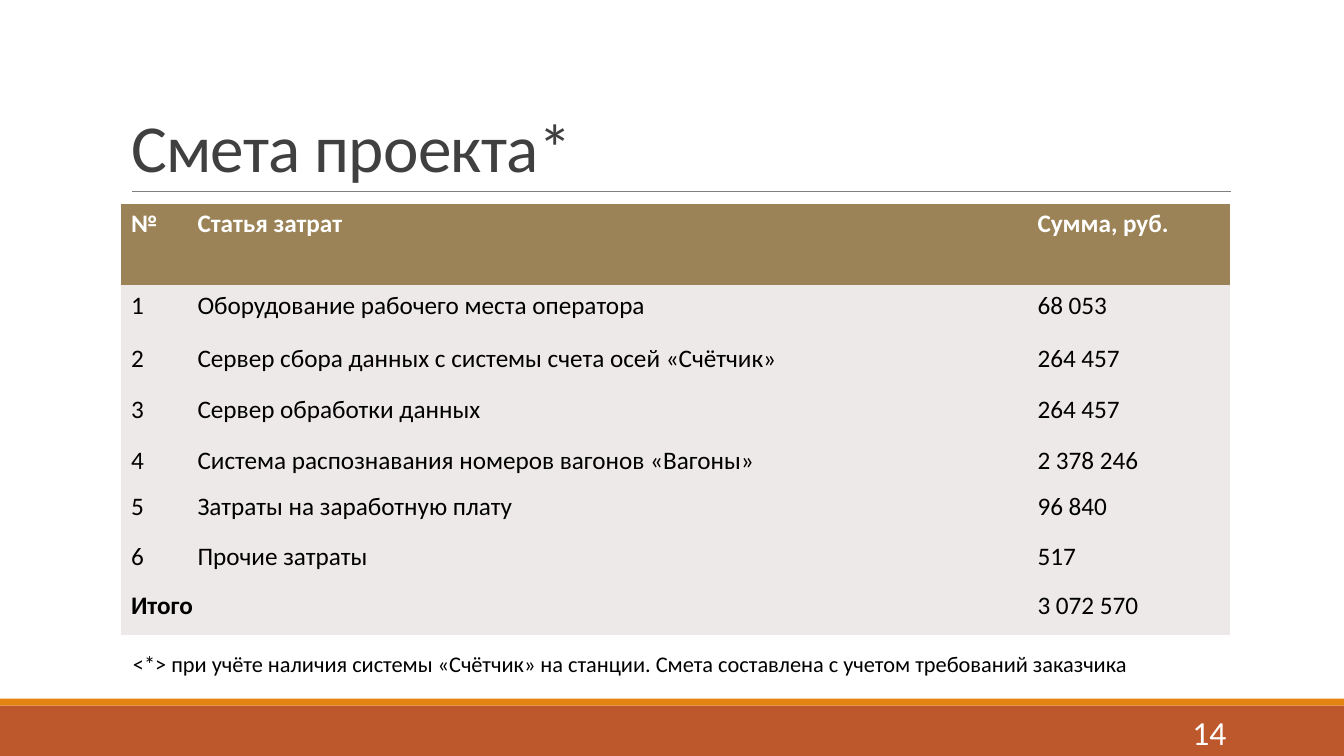
from dataclasses import dataclass
from typing import Any

import pptx
import pptx.dml.color
import pptx.enum.shapes
import pptx.enum.text
import pptx.oxml.ns
import pptx.util
from lxml import etree

Align = pptx.enum.text.PP_ALIGN
Anchor = pptx.enum.text.MSO_ANCHOR


@dataclass(frozen=True)
class Theme:
    font: str = "Calibri"
    white: str = "FFFFFF"
    black: str = "000000"
    ink: str = "404040"
    rule: str = "808080"
    rust: str = "BD582C"
    amber: str = "E48312"
    head: str = "9B8357"
    body: str = "EDE9E8"
    title: int = 48
    page: int = 24
    cell: int = 18
    note: int = 16


@dataclass(frozen=True)
class Box:
    """Left, top, width and height in percent of the slide."""
    left: float
    top: float
    width: float
    height: float


@dataclass(frozen=True)
class Style:
    size: int
    color: str
    bold: bool = False
    align: Any = Align.LEFT
    anchor: Any = Anchor.TOP


@dataclass(frozen=True)
class Bar:
    box: Box
    color: str


THEME = Theme()
WIDE, HIGH = pptx.util.Inches(13.33), pptx.util.Inches(7.5)

BARS = [
    Bar(Box(0, 93.33, 100, 6.67), THEME.rust),
    Bar(Box(0, 92.4, 100, 0.93), THEME.amber),
]
RULE = Box(9.83, 25.33, 81.77, 0)
TITLE = Box(9, 4.13, 82.52, 21.2)
PAGE = Box(81.25, 94.13, 10.73, 5.33)
NOTE = Box(9.15, 85.33, 82.82, 4.93)
TABLE = Box(9, 26.93, 82.53, 56.8)
COLS = [4.95, 62.5, 15.08]
ROWS = [10.8, 7.07, 6.67, 6.8, 6.13, 6.53, 6.53, 6.53]
PLAIN = "{2D5ABB26-0587-4C30-8999-92F81FD0307C}"

HEADER = ("№", "Статья затрат", "Сумма, руб.")
COSTS = [
    ("Оборудование рабочего места оператора", "68 053"),
    ("Сервер сбора данных с системы счета осей «Счётчик»", "264 457"),
    ("Сервер обработки данных", "264 457"),
    ("Система распознавания номеров вагонов «Вагоны»", "2 378 246"),
    ("Затраты на заработную плату", "96 840"),
    ("Прочие затраты", "517"),
]
TOTAL = ("Итого", "", "3 072 570")


def across(share: float) -> int:
    return round(WIDE * share / 100)


def down(share: float) -> int:
    return round(HIGH * share / 100)


def place(box: Box) -> tuple[int, int, int, int]:
    return across(box.left), down(box.top), across(box.width), down(box.height)


def paint(color: str) -> pptx.dml.color.RGBColor:
    return pptx.dml.color.RGBColor.from_string(color)


def apply(item: Any, values: dict[str, Any]) -> None:
    for name, value in values.items():
        setattr(item, name, value)


def write(frame: Any, text: str, style: Style) -> Any:
    para = frame.paragraphs[0]
    para.alignment = style.align
    run = para.add_run()
    run.text = text
    apply(run.font, {"name": THEME.font, "size": pptx.util.Pt(style.size), "bold": style.bold})
    run.font.color.rgb = paint(style.color)
    return run


def draw_bar(slide: Any, bar: Bar) -> None:
    kind = pptx.enum.shapes.MSO_SHAPE.RECTANGLE
    shape = slide.shapes.add_shape(kind, *place(bar.box))
    shape.shadow.inherit = False
    shape.fill.solid()
    shape.fill.fore_color.rgb = paint(bar.color)
    shape.line.fill.background()


def draw_rule(slide: Any, box: Box) -> None:
    left, top, width, height = place(box)
    kind = pptx.enum.shapes.MSO_CONNECTOR.STRAIGHT
    line = slide.shapes.add_connector(kind, left, top, left + width, top + height)
    line.line.color.rgb = paint(THEME.rule)
    line.line.width = pptx.util.Pt(0.5)
    etree.SubElement(line._element.spPr, pptx.oxml.ns.qn("a:effectLst"))


def draw_title(slide: Any, text: str) -> None:
    title = slide.shapes.title
    apply(title, dict(zip(("left", "top", "width", "height"), place(TITLE))))
    frame = title.text_frame
    apply(frame, {"vertical_anchor": Anchor.BOTTOM, "word_wrap": True,
                  "auto_size": pptx.enum.text.MSO_AUTO_SIZE.NONE})
    run = write(frame, text, Style(THEME.title, THEME.ink))
    frame.paragraphs[0].line_spacing = 0.85
    run.font._element.set("spc", "-50")


def draw_text(slide: Any, box: Box, text: str, style: Style) -> None:
    frame = slide.shapes.add_textbox(*place(box)).text_frame
    apply(frame, {"word_wrap": True, "vertical_anchor": style.anchor})
    write(frame, text, style)


def draw_table(slide: Any) -> None:
    items = [(str(num), *cost) for num, cost in enumerate(COSTS, 1)]
    data = [HEADER, *items, TOTAL]
    table = slide.shapes.add_table(len(ROWS), len(COLS), *place(TABLE)).table
    table._tbl.tblPr.find(pptx.oxml.ns.qn("a:tableStyleId")).text = PLAIN
    for col, share in zip(table.columns, COLS):
        col.width = across(share)
    for row, share in zip(table.rows, ROWS):
        row.height = down(share)

    # Total label spans the number and item columns
    last = len(data) - 1
    table.cell(last, 0).merge(table.cell(last, 1))
    for r, texts in enumerate(data):
        for c, text in enumerate(texts):
            cell = table.cell(r, c)
            cell.fill.solid()
            cell.fill.fore_color.rgb = paint(THEME.body if r else THEME.head)
            if not cell.is_spanned:
                color = THEME.black if r else THEME.white
                bold = r == 0 or (r == last and c == 0)
                write(cell.text_frame, text, Style(THEME.cell, color, bold))


def main() -> None:
    deck = pptx.Presentation()
    apply(deck, {"slide_width": WIDE, "slide_height": HIGH})
    slide = deck.slides.add_slide(deck.slide_layouts.get_by_name("Title Only"))

    # Footer bars and title rule
    for bar in BARS:
        draw_bar(slide, bar)
    draw_rule(slide, RULE)

    # Title and page number
    draw_title(slide, "Смета проекта*")
    draw_text(slide, PAGE, "14",
              Style(THEME.page, THEME.white, align=Align.RIGHT, anchor=Anchor.MIDDLE))

    # Budget and its footnote
    draw_table(slide)
    draw_text(slide, NOTE,
              "<*> при учёте наличия системы «Счётчик» на станции. "
              "Смета составлена с учетом требований заказчика",
              Style(THEME.note, THEME.black))
    deck.save("out.pptx")


if __name__ == "__main__":
    main()
